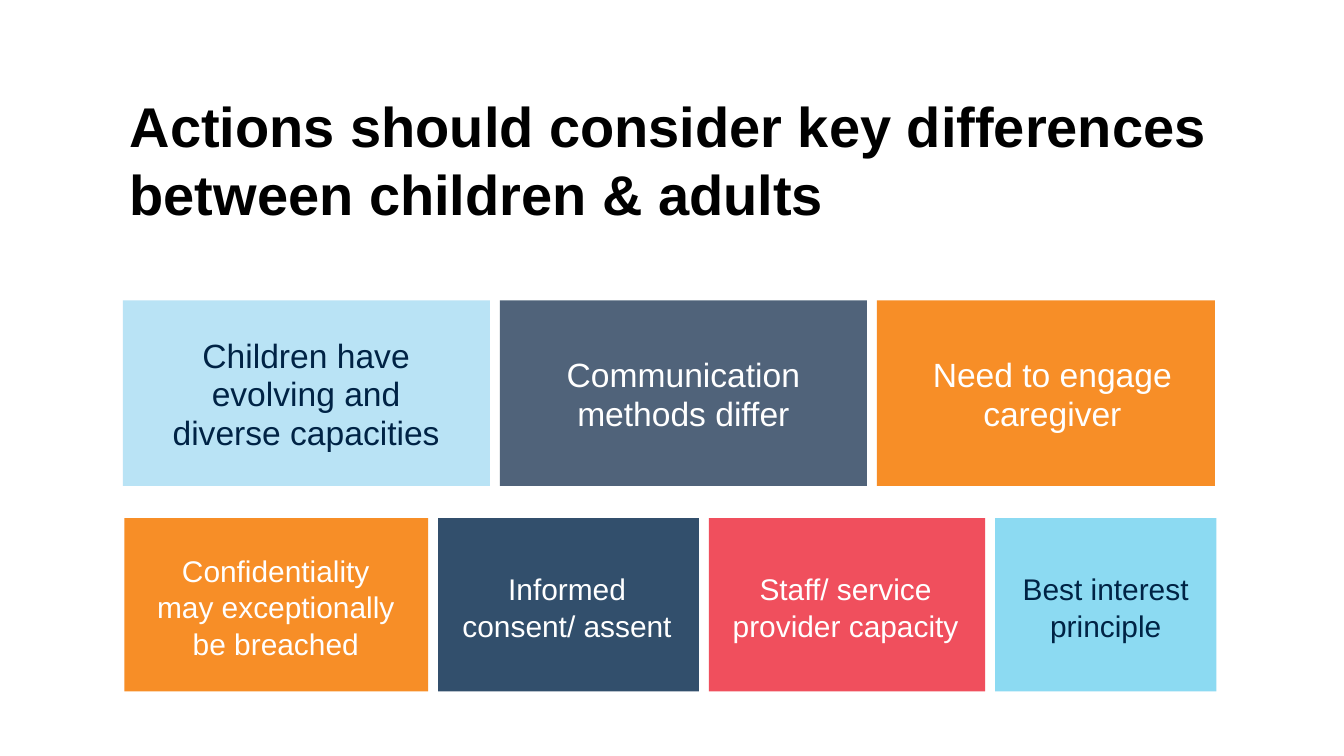
from lxml import etree
from pptx import Presentation
from pptx.dml.color import RGBColor
from pptx.enum.shapes import MSO_SHAPE
from pptx.enum.text import MSO_ANCHOR, MSO_AUTO_SIZE, PP_ALIGN
from pptx.oxml.ns import qn
from pptx.util import Pt

RECTANGLE = MSO_SHAPE.RECTANGLE
TOP, MIDDLE = MSO_ANCHOR.TOP, MSO_ANCHOR.MIDDLE
LEFT, CENTER = PP_ALIGN.LEFT, PP_ALIGN.CENTER
GROW = MSO_AUTO_SIZE.SHAPE_TO_FIT_TEXT

EMU_PER_PX = 9144
GAP = 15
COLORS = {
    "black": "000000", "white": "FFFFFF", "navy": "002345",
    "sky": "9AD7F1", "slate": "3D536C", "orange": "F78E27",
    "blue": "163758", "red": "EC1B2D", "cyan": "00ADE4",
}
ROWS = [
    {"left": 183, "top": 447, "height": 276, "size": 36, "spacing": 41.4, "drop": 2, "tiles": [
        (546, "sky", 69, "Children have evolving and diverse capacities", "navy", (475, 183), 0),
        (546, "slate", 90, "Communication methods differ", "white", (394, 125), 0),
        (503, "orange", 100, "Need to engage caregiver", "white", (434, 125), 10),
    ]},
    {"left": 185, "top": 771, "height": 258, "size": 32, "spacing": 38.8, "drop": 3, "tiles": [
        (452, "orange", 100, "Confidentiality may exceptionally be breached", "white", (383, 172), 0),
        (388, "blue", 88, "Informed consent/ assent", "white", (354, 118), -2),
        (411, "red", 77, "Staff/ service provider capacity", "white", (357, 118), -2),
        (329, "cyan", 45, "Best interest principle", "navy", (299, 118), 0),
    ]},
]


class SlideBuilder:
    """Hold the style and the current slide, and draw each kind of element."""

    def __init__(self, deck, font):
        self.page = deck.slides.add_slide(deck.slide_layouts[5])
        self.font = font

    def px(self, *lengths):
        return [round(length * EMU_PER_PX) for length in lengths]

    def color(self, name):
        return RGBColor.from_string(COLORS[name])

    def fill_text(self, box, text, size, color, spacing, align, anchor, bold=False):
        frame = box.text_frame
        frame_format = {"word_wrap": True, "auto_size": GROW, "vertical_anchor": anchor}
        for name, value in frame_format.items():
            setattr(frame, name, value)
        para = frame.paragraphs[0]
        para_format = {"alignment": align, "line_spacing": Pt(spacing)}
        for name, value in para_format.items():
            setattr(para, name, value)
        span = para.add_run()
        span.text = text
        font_format = {"name": self.font, "size": Pt(size), "bold": bold}
        for name, value in font_format.items():
            setattr(span.font, name, value)
        span.font.color.rgb = self.color(color)

    def title(self, text, left, top, width, height):
        box = self.page.shapes.title
        places = zip(("left", "top", "width", "height"), self.px(left, top, width, height))
        for name, value in places:
            setattr(box, name, value)
        self.fill_text(box, text, 60, "black", 72.6, LEFT, TOP, bold=True)

    def tile(self, left, top, width, height, color, opacity):
        box = self.page.shapes.add_shape(RECTANGLE, *self.px(left, top, width, height))
        box.shadow.inherit = False
        box.line.fill.background()
        box.fill.solid()
        box.fill.fore_color.rgb = self.color(color)
        if opacity < 100:
            shade = box.element.spPr.find(".//" + qn("a:srgbClr"))
            etree.SubElement(shade, qn("a:alpha"), val=str(opacity * 1000))

    def label(self, text, left, top, width, height, size, color, spacing):
        box = self.page.shapes.add_textbox(*self.px(left, top, width, height))
        self.fill_text(box, text, size, color, spacing, CENTER, MIDDLE)

    def row(self, left, top, height, size, spacing, drop, tiles):
        for width, fill, opacity, text, color, (label_width, label_height), shift in tiles:
            self.tile(left, top, width, height, fill, opacity)
            label_left = left + (width - label_width) // 2 + shift
            label_top = top + (height - label_height) // 2 + drop
            self.label(text, label_left, label_top, label_width, label_height, size, color, spacing)
            left += width + GAP


def main():
    deck = Presentation()
    deck.slide_width = 2000 * EMU_PER_PX
    deck.slide_height = 1125 * EMU_PER_PX
    builder = SlideBuilder(deck, "Arial")
    builder.title("Actions should consider key differences between children & adults", 183, 130, 1625, 212)
    for row in ROWS:
        builder.row(**row)
    deck.save("out.pptx")


if __name__ == "__main__":
    main()
